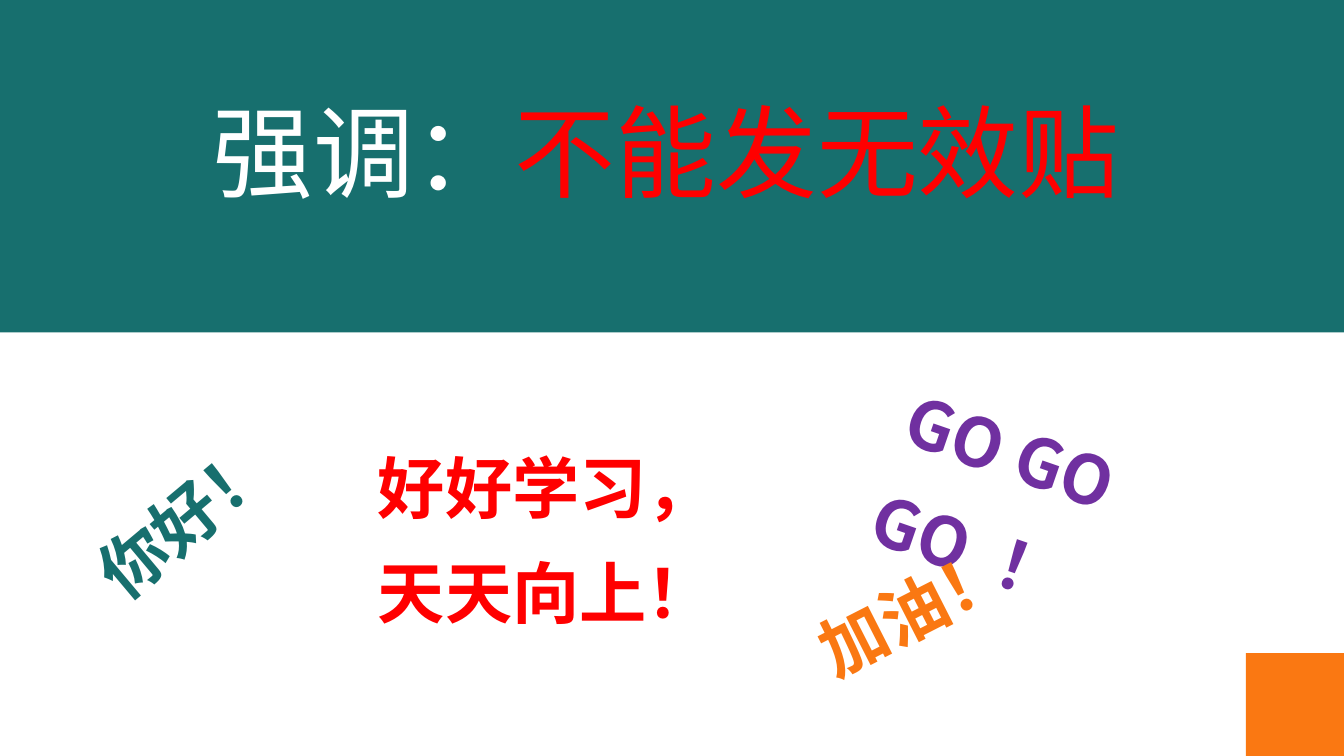
from lxml import etree
from pptx import Presentation
from pptx.dml.color import RGBColor
from pptx.enum.shapes import MSO_SHAPE
from pptx.enum.text import MSO_ANCHOR, MSO_AUTO_SIZE, PP_ALIGN
from pptx.oxml.ns import qn
from pptx.util import Pt

RECT = MSO_SHAPE.RECTANGLE
TOP = MSO_ANCHOR.TOP
FIXED = MSO_AUTO_SIZE.NONE
LEFT = PP_ALIGN.LEFT
CENTER = PP_ALIGN.CENTER

FONT = "Noto Sans CJK SC"
TEAL = RGBColor(0x17, 0x6F, 0x6E)
ORANGE = RGBColor(0xFA, 0x78, 0x12)
PURPLE = RGBColor(0x70, 0x30, 0xA0)
RED = RGBColor(0xFF, 0x00, 0x00)
WHITE = RGBColor(0xFF, 0xFF, 0xFF)


def put_text(shape, lines, size=48, bold=True, align=LEFT, space=1.3):
    frame = shape.text_frame
    frame.word_wrap = True
    frame.auto_size = FIXED
    frame.vertical_anchor = TOP
    for i, line in enumerate(lines):
        para = frame.add_paragraph() if i else frame.paragraphs[0]
        para.alignment = align
        para.line_spacing = space
        para.space_before = Pt(0)
        for text, color in line:
            run = para.add_run()
            run.text = text
            font = run.font
            font.name = FONT
            font.size = Pt(size)
            font.bold = bold
            font.color.rgb = color
            east = etree.SubElement(run._r.get_or_add_rPr(), qn("a:ea"))
            east.set("typeface", FONT)


def add_block(slide, box, color, turn=0):
    block = slide.shapes.add_shape(RECT, *map(Pt, box))
    block.shadow.inherit = False
    block.fill.solid()
    block.fill.fore_color.rgb = color
    block.line.fill.background()
    block.rotation = turn
    return block


def add_cheer(slide, box, lines, color, turn=0):
    cheer = slide.shapes.add_textbox(*map(Pt, box))
    cheer.rotation = turn
    put_text(cheer, [[(line, color)] for line in lines])


def set_title(slide, box, parts):
    title = slide.shapes.title
    title.left, title.top, title.width, title.height = map(Pt, box)
    put_text(title, [parts], size=72, bold=False, align=CENTER, space=1.0)
    return title


def main():
    deck = Presentation()
    deck.slide_width, deck.slide_height = Pt(960), Pt(540)
    slide = deck.slides.add_slide(deck.slide_layouts[5])

    band = add_block(slide, (0, 0, 960, 237.4), TEAL)
    add_block(slide, (888.5, 468, 73.5, 70.5), ORANGE, 270)
    title = set_title(slide, (39.6, 60.5, 856, 94.5),
                      [(" 强调：", WHITE), ("不能发无效贴", RED)])
    title.element.addprevious(band.element)

    add_cheer(slide, (55.5, 324.7, 142.5, 102.2), ["你好！"], TEAL, 320)
    add_cheer(slide, (262.8, 298, 324.7, 84.2), ["好好学习，", "天天向上！"], RED)
    add_cheer(slide, (633.6, 293.8, 298.8, 104.4), ["GO GO GO ！"], PURPLE, 19)
    add_cheer(slide, (574.5, 388.8, 142.5, 102.2), ["加油！"], ORANGE, 333)

    deck.save("out.pptx")


if __name__ == "__main__":
    main()
